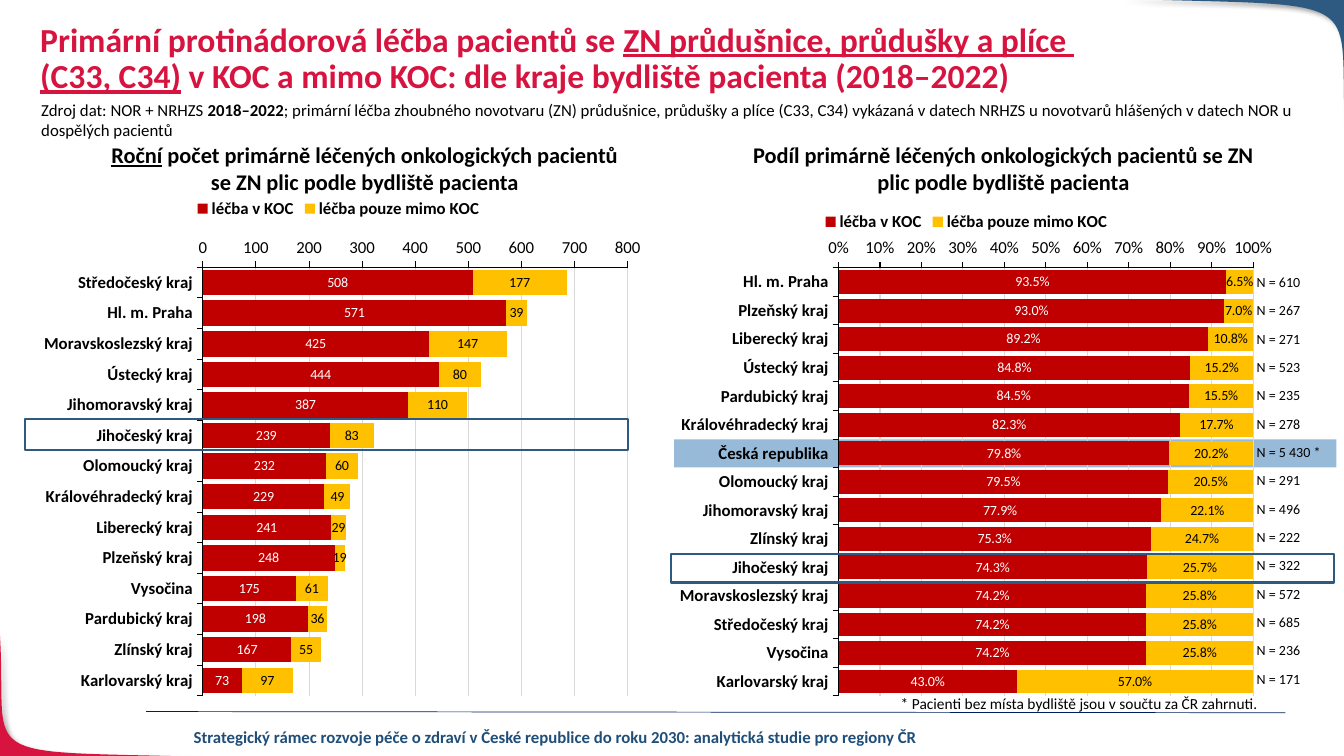
from typing import NamedTuple
from lxml import etree
from pptx import Presentation
from pptx.chart.data import CategoryChartData
from pptx.dml.color import RGBColor
from pptx.enum.chart import XL_CHART_TYPE, XL_LABEL_POSITION, XL_LEGEND_POSITION, XL_TICK_MARK
from pptx.enum.shapes import MSO_CONNECTOR, MSO_SHAPE
from pptx.enum.text import MSO_ANCHOR, MSO_AUTO_SIZE, PP_ALIGN
from pptx.oxml.ns import qn
from pptx.util import Cm, Pt

STACK, FULL = XL_CHART_TYPE.BAR_STACKED, XL_CHART_TYPE.BAR_STACKED_100
LEFT, MID = PP_ALIGN.LEFT, PP_ALIGN.CENTER
TOP, OUT, CENTER = XL_LEGEND_POSITION.TOP, XL_TICK_MARK.OUTSIDE, XL_LABEL_POSITION.CENTER
FONT, RED, NAVY, BLACK = "Calibri", "D71440", "2E5980", "000000"
PLAIN = "{2D5ABB26-0587-4C30-8999-92F81FD0307C}"
SERIES = [("léčba v KOC", "C00000", "FFFFFF"), ("léčba pouze mimo KOC", "FFC000", BLACK)]


class Bit(NamedTuple):
    """A run of text, with a line break after it if asked."""
    text: str
    bold: bool = True
    under: bool = False
    wrap: bool = False


class Label(NamedTuple):
    """A paragraph of runs and its place in centimetres."""
    box: tuple
    size: float
    bits: list
    align: PP_ALIGN = LEFT
    color: str = BLACK


class Graph(NamedTuple):
    """A bar chart with rows of a name and two values."""
    box: tuple
    kind: XL_CHART_TYPE
    plot: tuple
    axis: str
    label: str
    rows: list


class Panel(NamedTuple):
    """A plain rectangle with a fill or an outline."""
    box: tuple
    fill: str = ""
    line: str = ""


class Corner(NamedTuple):
    """A curved corner: four curve points, then the tip."""
    curve: list
    tip: tuple
    color: str


CORNERS = [Corner([(5.41, 19.08), (-0.86, 18.9), (0.2, 19.28), (0, 16)], (-0.03, 19.08), RED),
           Corner([(28.22, -0.03), (34.8, 0.18), (33.68, -0.25), (33.91, 3.61)], (33.91, -0.03), NAVY)]
BAND = Panel((16.99, 11.07, 16.69, 0.71), fill="97BAD9")
FRAMES = [Panel((16.92, 13.97, 16.69, 0.71), line=NAVY), Panel((0.64, 10.57, 15.19, 0.76), line=NAVY)]
TITLE = Label((0.76, 0.46, 29.72, 1.5), 24, [
    Bit("Primární protinádorová léčba pacientů se "),
    Bit("ZN průdušnice, průdušky a plíce ", under=True, wrap=True), Bit("(C33, C34)", under=True),
    Bit(" v KOC a mimo KOC: dle kraje bydliště pacienta (2018–2022)")], color=RED)
LABELS = [
    Label((2.57, 18.19, 22.86, 0.76), 12, [Bit(
        "Strategický rámec rozvoje péče o zdraví v České republice do roku 2030: "
        "analytická studie pro regiony ČR")], MID, "1F4E79"),
    Label((0.79, 2.39, 32.94, 1.27), 12, [
        Bit("Zdroj dat: NOR + NRHZS ", False), Bit("2018–2022"),
        Bit("; primární léčba zhoubného novotvaru (ZN) průdušnice, průdušky a plíce (C33, C34) "
            "vykázaná v datech NRHZS u novotvarů hlášených v datech NOR u dospělých pacientů", False)]),
    Label((2.44, 3.43, 13.51, 1.63), 16, [Bit("Roční", under=True), Bit(
        " počet primárně léčených onkologických pacientů se ZN plic podle bydliště pacienta")], MID),
    Label((18.62, 3.43, 13.34, 1.63), 16, [Bit(
        "Podíl primárně léčených onkologických pacientů se ZN plic podle bydliště pacienta")], MID),
    Label((22.45, 17.37, 10.92, 0.74), 11, [Bit(
        "* Pacienti bez místa bydliště jsou v součtu za ČR zahrnuti.", False)])]
COUNTS = Graph((0.15, 4.72, 16.76, 13.36), STACK, (0.296, 0.151, 0.639, 0.808), "#,##0", "#,##0", [
    ("Středočeský kraj", 508, 177), ("Hl. m. Praha", 571, 39), ("Moravskoslezský kraj", 425, 147),
    ("Ústecký kraj", 444, 80), ("Jihomoravský kraj", 387, 110), ("Jihočeský kraj", 239, 83),
    ("Olomoucký kraj", 232, 60), ("Královéhradecký kraj", 229, 49), ("Liberecký kraj", 241, 29),
    ("Plzeňský kraj", 248, 19), ("Vysočina", 175, 61), ("Pardubický kraj", 198, 36),
    ("Zlínský kraj", 167, 55), ("Karlovarský kraj", 73, 97)])
SHARES = Graph((16.38, 5.05, 15.95, 12.78), FULL, (0.298, 0.133, 0.655, 0.844), "0%", "0.0%", [
    ("Hl. m. Praha", 0.935, 0.065), ("Plzeňský kraj", 0.93, 0.07), ("Liberecký kraj", 0.892, 0.108),
    ("Ústecký kraj", 0.848, 0.152), ("Pardubický kraj", 0.845, 0.155), ("Královéhradecký kraj", 0.823, 0.177),
    ("Česká republika", 0.798, 0.202), ("Olomoucký kraj", 0.795, 0.205), ("Jihomoravský kraj", 0.779, 0.221),
    ("Zlínský kraj", 0.753, 0.247), ("Jihočeský kraj", 0.743, 0.257), ("Moravskoslezský kraj", 0.742, 0.258),
    ("Středočeský kraj", 0.742, 0.258), ("Vysočina", 0.742, 0.258), ("Karlovarský kraj", 0.43, 0.57)])
TOTALS = ["610", "267", "271", "523", "235", "278", "5 430 *", "291", "496", "222", "322", "572", "685", "236", "171"]


def emu(vals: tuple) -> list:
    """Turn centimetres into lengths."""
    return [Cm(val) for val in vals]


def paint(fill, color: str) -> None:
    """Give a fill one solid colour, or none."""
    if color:
        fill.solid()
        fill.fore_color.rgb = RGBColor.from_string(color)
    else:
        fill.background()


def stroke(line, color: str, width: float) -> None:
    """Set the colour and width of a line."""
    paint(line.fill, color)
    line.width = Pt(width)


def style(font, size: float, color: str = BLACK, bold: bool = False) -> None:
    """Set the face, size, colour and weight of a font."""
    font.name, font.size, font.bold = FONT, Pt(size), bold
    paint(font.fill, color)


def write(frame, label: Label) -> None:
    """Write the runs of a label into a text frame."""
    frame.word_wrap = True
    para = frame.paragraphs[0]
    para.alignment = label.align
    for bit in label.bits:
        run = para.add_run()
        run.text = bit.text
        style(run.font, label.size, label.color, bit.bold)
        run.font.underline = bit.under
        if bit.wrap:
            para.add_line_break()


def set_title(slide, label: Label) -> None:
    """Move the title placeholder and write into it."""
    title = slide.shapes.title
    title.left, title.top, title.width, title.height = emu(label.box)
    frame = title.text_frame
    write(frame, label)
    frame.auto_size, frame.vertical_anchor = MSO_AUTO_SIZE.NONE, MSO_ANCHOR.TOP
    frame.paragraphs[0].line_spacing = 0.9


def add_corner(slide, corner: Corner, steps: int = 40) -> None:
    """Draw a curved corner with a soft shadow."""
    dots = []
    for t in (step / steps for step in range(steps + 1)):
        mix = ((1 - t) ** 3, 3 * t * (1 - t) ** 2, 3 * t * t * (1 - t), t ** 3)
        dots.append(emu(sum(m * p[i] for m, p in zip(mix, corner.curve)) for i in (0, 1)))
    pen = slide.shapes.build_freeform(*dots[0])
    pen.add_line_segments(dots[1:] + [emu(corner.tip)])
    shape = pen.convert_to_shape()
    paint(shape.fill, corner.color)
    paint(shape.line.fill, "")
    shape.shadow.inherit = False
    glow = etree.SubElement(shape.element.spPr.find(qn("a:effectLst")), qn("a:outerShdw"),
                            blurRad=str(Pt(4)), dist=str(Pt(3)), dir="2700000", rotWithShape="0")
    etree.SubElement(etree.SubElement(glow, qn("a:srgbClr"), val=BLACK), qn("a:alpha"), val="40000")


def add_panel(slide, panel: Panel) -> None:
    """Add a rectangle with a fill or an outline."""
    shape = slide.shapes.add_shape(MSO_SHAPE.RECTANGLE, *emu(panel.box))
    shape.shadow.inherit = False
    paint(shape.fill, panel.fill)
    stroke(shape.line, panel.line, 1.5)


def add_graph(slide, graph: Graph) -> None:
    """Add a stacked bar chart with its legend on top."""
    names, *values = zip(*graph.rows)
    data = CategoryChartData(number_format=graph.label)
    data.categories = names
    for (name, _, _), vals in zip(SERIES, values):
        data.add_series(name, vals)
    chart = slide.shapes.add_chart(graph.kind, *emu(graph.box), data).chart
    style(chart.font, 12)
    chart.has_title, chart.has_legend = False, True
    chart.legend.position, chart.legend.include_in_layout = TOP, False
    style(chart.legend.font, 12, bold=True)
    cat, val = chart.category_axis, chart.value_axis
    for axis, bold in ((cat, True), (val, False)):
        axis.major_tick_mark = OUT
        style(axis.tick_labels.font, 12, bold=bold)
        stroke(axis.format.line, BLACK, 0.75)
    cat.reverse_order, val.minimum_scale = True, 0
    val.tick_labels.number_format, val.tick_labels.number_format_is_linked = graph.axis, False
    stroke(val.major_gridlines.format.line, "D9D9D9", 0.75)
    plot = chart.plots[0]
    plot.gap_width, plot.overlap, plot.vary_by_categories = 20, 100, False
    for bar, (_, color, ink) in zip(plot.series, SERIES):
        paint(bar.format.fill, color)
        tags = bar.data_labels
        tags.show_value, tags.position = True, CENTER
        tags.number_format, tags.number_format_is_linked = graph.label, False
        style(tags.font, 10, ink)
    area = chart.element.find(".//" + qn("c:plotArea"))
    for old in area.findall(qn("c:layout")):
        area.remove(old)
    area.insert(0, etree.Element(qn("c:layout")))
    spot = etree.SubElement(area[0], qn("c:manualLayout"))
    keys = ("layoutTarget", "xMode", "yMode", "x", "y", "w", "h")
    for key, value in zip(keys, ("inner", "edge", "edge") + graph.plot):
        etree.SubElement(spot, qn("c:" + key), val=str(value))


def add_totals(slide, box: tuple) -> None:
    """Add the column of patient counts beside the shares."""
    shape = slide.shapes.add_table(len(TOTALS), 1, *emu(box))
    shape.element.find(".//" + qn("a:tableStyleId")).text = PLAIN
    shape.table.first_row = shape.table.horz_banding = False
    for row, total in zip(shape.table.rows, TOTALS):
        cell = row.cells[0]
        paint(cell.fill, "")
        cell.vertical_anchor = MSO_ANCHOR.MIDDLE
        cell.margin_left = cell.margin_right = cell.margin_top = Cm(0.02)
        cell.margin_bottom = 0
        write(cell.text_frame, Label(box, 10, [Bit("N = " + total, False)]))


def main() -> None:
    """Build the slide and save it."""
    deck = Presentation()
    deck.slide_width, deck.slide_height = emu((33.87, 19.05))
    slide = deck.slides.add_slide(deck.slide_layouts[5])
    for corner in CORNERS:
        add_corner(slide, corner)
    rule = slide.shapes.add_connector(MSO_CONNECTOR.STRAIGHT, *emu((3.68, 17.93, 32.39, 17.96)))
    stroke(rule.line, "002060", 0.5)
    etree.SubElement(rule.element.spPr, qn("a:effectLst"))
    add_panel(slide, BAND)
    set_title(slide, TITLE)
    for graph in (COUNTS, SHARES):
        add_graph(slide, graph)
    for label in LABELS:
        frame = slide.shapes.add_textbox(*emu(label.box)).text_frame
        write(frame, label)
        frame.auto_size = MSO_AUTO_SIZE.SHAPE_TO_FIT_TEXT
    for panel in FRAMES:
        add_panel(slide, panel)
    add_totals(slide, (31.65, 6.76, 1.98, 10.72))
    deck.save("out.pptx")


if __name__ == "__main__":
    main()
